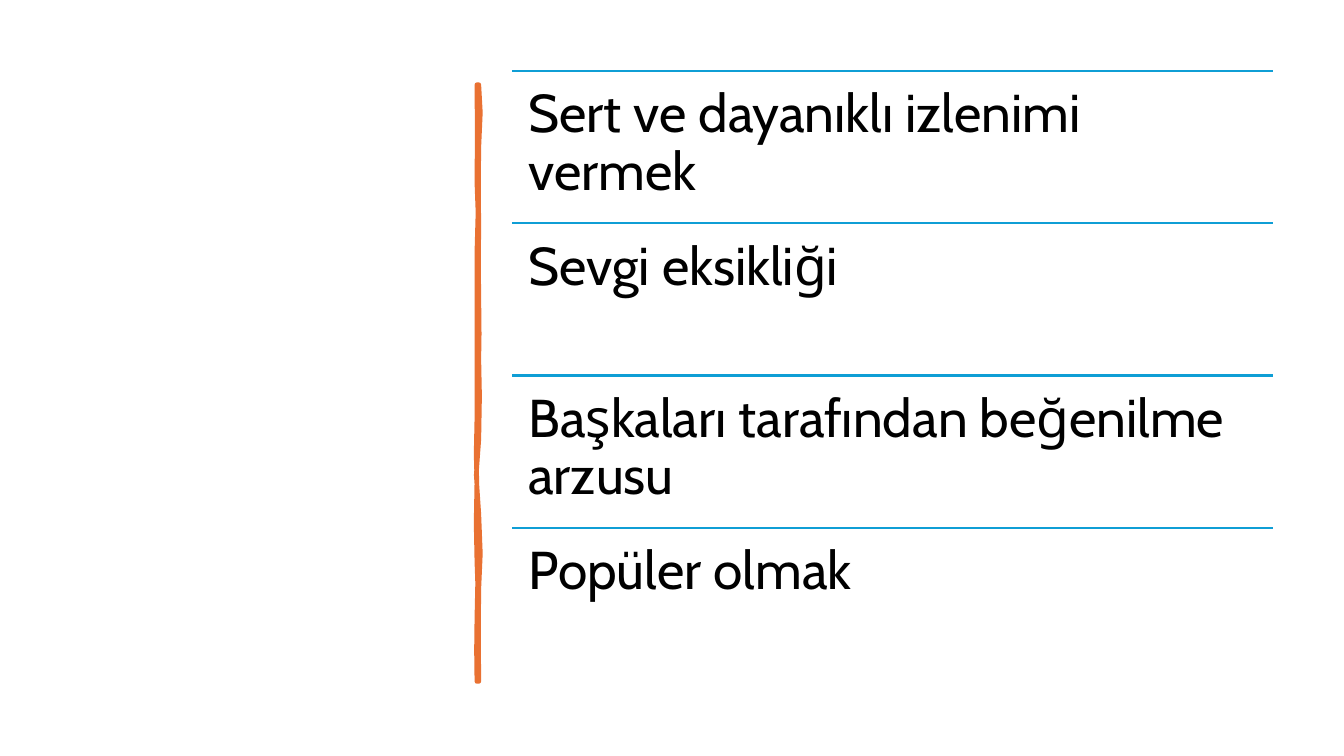
from lxml import etree
from pptx import Presentation
from pptx import util as u
from pptx.dml.color import RGBColor
from pptx.enum import shapes, text
from pptx.oxml import ns

ORANGE = RGBColor(0xE9, 0x71, 0x32)
BLUE = RGBColor(0x0F, 0x9E, 0xD5)
BLACK = RGBColor(0, 0, 0)

REASONS = [
    "Sert ve dayanıklı izlenimi vermek",
    "Sevgi eksikliği",
    "Başkaları tarafından beğenilme arzusu",
    "Popüler olmak",
]
LEFT, TOP, WIDTH, BOTTOM = 5.08, 0.7, 7.55, 6.75
ROW_HEIGHT = (BOTTOM - TOP) / len(REASONS)

# Brush stroke edges: each curve is control x, y, control x, y, end x, y
STROKE_START = (4.75, 0.84)
STROKE_CURVES = [
    # right edge, downwards
    (4.77, 1.02, 4.77, 1.19, 4.75, 1.46),
    (4.73, 1.73, 4.76, 1.95, 4.75, 2.26),
    (4.74, 2.57, 4.75, 2.62, 4.75, 2.94),
    (4.74, 3.25, 4.77, 3.42, 4.75, 3.56),
    (4.73, 3.70, 4.79, 4.14, 4.75, 4.36),
    (4.71, 4.57, 4.72, 4.84, 4.75, 5.10),
    (4.77, 5.36, 4.77, 5.64, 4.75, 5.84),
    (4.73, 6.03, 4.76, 6.50, 4.75, 6.76),
    # lower end
    (4.74, 6.76, 4.73, 6.76, 4.73, 6.76),
    # left edge, upwards
    (4.74, 6.46, 4.71, 6.44, 4.73, 6.13),
    (4.74, 5.83, 4.74, 5.70, 4.73, 5.57),
    (4.72, 5.44, 4.72, 4.95, 4.73, 4.77),
    (4.73, 4.59, 4.71, 4.45, 4.73, 4.15),
    (4.74, 3.86, 4.72, 3.73, 4.73, 3.35),
    (4.74, 2.98, 4.72, 2.81, 4.73, 2.50),
    (4.74, 2.18, 4.75, 2.00, 4.73, 1.81),
    (4.70, 1.63, 4.77, 1.04, 4.73, 0.84),
]


def curve_points(start, curves):
    """Return the middle and the end of each cubic curve in a chain."""
    points = []
    x0, y0 = start
    for x1, y1, x2, y2, x3, y3 in curves:
        middle = ((x0 + 3 * x1 + 3 * x2 + x3) / 8,
                  (y0 + 3 * y1 + 3 * y2 + y3) / 8)
        for x, y in (middle, (x3, y3)):
            points.append((u.Inches(x), u.Inches(y)))
        x0, y0 = x3, y3
    return points


class SlideBuilder:
    font = "Cabin"
    size = u.Pt(38)
    inset = u.Inches(0.16)

    def __init__(self, page):
        self.page = page

    def brush_stroke(self, start, curves, color, width):
        builder = self.page.shapes.build_freeform(
            u.Inches(start[0]), u.Inches(start[1]))
        builder.add_line_segments(curve_points(start, curves), close=True)
        stroke = builder.convert_to_shape()
        stroke.shadow.inherit = False
        stroke.fill.solid()
        stroke.fill.fore_color.rgb = color
        stroke.line.color.rgb = color
        stroke.line.width = u.Pt(width)
        outline = stroke.element.spPr.find(ns.qn("a:ln"))
        etree.SubElement(outline, ns.qn("a:round"))

    def rule(self, left, top, width, color):
        line = self.page.shapes.add_connector(
            shapes.MSO_CONNECTOR.STRAIGHT, u.Inches(left), u.Inches(top),
            u.Inches(left + width), u.Inches(top))
        line.line.color.rgb = color
        line.line.width = u.Pt(1.5)
        etree.SubElement(line.element.spPr, ns.qn("a:effectLst"))

    def text_box(self, wording, left, top, width, height):
        box = self.page.shapes.add_textbox(
            u.Inches(left), u.Inches(top), u.Inches(width), u.Inches(height))
        frame = box.text_frame
        frame.word_wrap = True
        frame.vertical_anchor = text.MSO_ANCHOR.TOP
        frame.margin_left = frame.margin_right = self.inset
        frame.margin_top = frame.margin_bottom = self.inset
        para = frame.paragraphs[0]
        para.line_spacing = 0.9
        span = para.add_run()
        span.text = wording
        span.font.name = self.font
        span.font.size = self.size
        span.font.color.rgb = BLACK


def main():
    deck = Presentation()
    deck.slide_width, deck.slide_height = u.Inches(13.33), u.Inches(7.5)
    slide = SlideBuilder(deck.slides.add_slide(deck.slide_layouts[6]))

    # Vertical divider
    slide.brush_stroke(STROKE_START, STROKE_CURVES, ORANGE, 3.25)

    # Ruled list
    for index, reason in enumerate(REASONS):
        top = TOP + index * ROW_HEIGHT
        slide.rule(LEFT, top, WIDTH, BLUE)
        slide.text_box(reason, LEFT, top, WIDTH, ROW_HEIGHT)

    deck.save("out.pptx")


if __name__ == "__main__":
    main()
